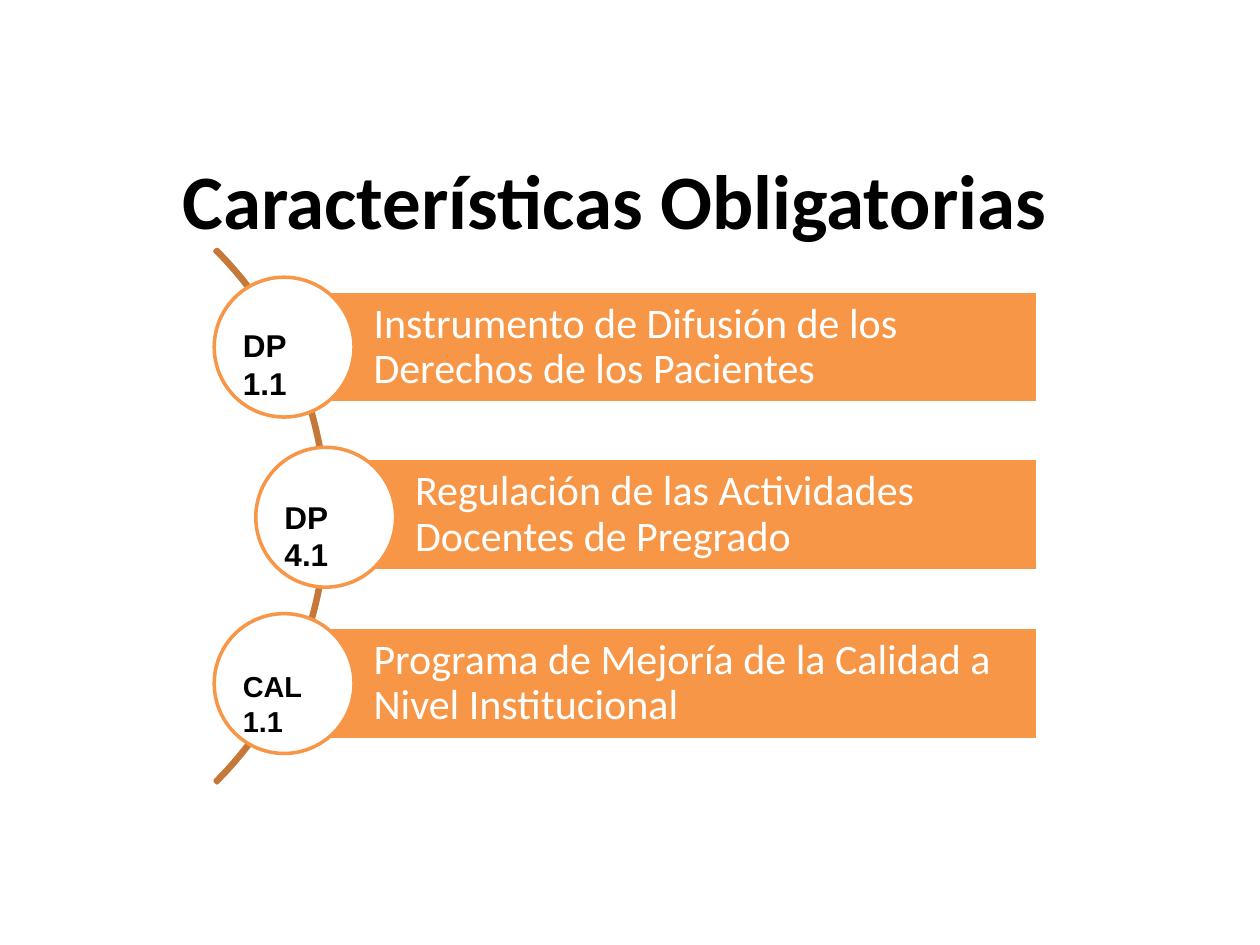
from pptx import Presentation
from pptx.dml.color import RGBColor
from pptx.enum.shapes import MSO_SHAPE
from pptx.enum.text import MSO_ANCHOR, PP_ALIGN
from pptx.util import Inches, Pt

RECT, OVAL, ARC = MSO_SHAPE.RECTANGLE, MSO_SHAPE.OVAL, MSO_SHAPE.BLOCK_ARC
MIDDLE, TOP = MSO_ANCHOR.MIDDLE, MSO_ANCHOR.TOP
LEFT, CENTER = PP_ALIGN.LEFT, PP_ALIGN.CENTER
ORANGE, BROWN, WHITE, BLACK = "F79646", "C67838", "FFFFFF", "000000"
CIRCLE = 1.11
BAR_RIGHT, BAR_HEIGHT = 8.24, 0.89

# circle left, circle top, bar top, label top, label size, label, description
ITEMS = [
    (1.7, 2.2, 2.31, 2.54, 18, "DP 1.1",
     "Instrumento de Difusión de los Derechos de los Pacientes"),
    (2.03, 3.55, 3.64, 3.9, 18, "DP 4.1",
     "Regulación de las Actividades Docentes de Pregrado"),
    (1.7, 4.87, 4.98, 5.26, 16.5, "CAL 1.1",
     "Programa de Mejoría de la Calidad a Nivel Institucional"),
]


def rgb(color):
    return RGBColor.from_string(color)


def add_shape(s, kind, box, fill, line):
    sp = s.shapes.add_shape(kind, *map(Inches, box))
    sp.shadow.inherit = False
    if fill:
        sp.fill.solid()
        sp.fill.fore_color.rgb = rgb(fill)
    else:
        sp.fill.background()
    sp.line.color.rgb = rgb(line)
    sp.line.width = Pt(2)
    return sp


def write(sp, text, size, font, color, bold=False, anchor=MIDDLE, align=LEFT):
    tf = sp.text_frame
    tf.word_wrap = True
    tf.vertical_anchor = anchor
    p = tf.paragraphs[0]
    p.text = text
    p.alignment = align
    p.font.size = Pt(size)
    p.font.name = font
    p.font.bold = bold
    p.font.color.rgb = rgb(color)
    return tf


def add_title(s, box, text):
    sp = s.shapes.add_textbox(*map(Inches, box))
    write(sp, text, 44, "Calibri", BLACK, bold=True, align=CENTER)


def add_arc(s, box):
    """Draw the thin curve from 315 to 45 degrees of the circle in box."""
    sp = add_shape(s, ARC, box, None, BROWN)
    for i, value in enumerate((189, 27, 0.004)):
        sp.adjustments[i] = value


def add_bar(s, box, text):
    sp = add_shape(s, RECT, box, ORANGE, WHITE)
    tf = write(sp, text, 24, "Calibri", WHITE)
    tf.margin_left = Inches(0.71)
    tf.margin_right = tf.margin_top = tf.margin_bottom = Inches(0.07)
    tf.paragraphs[0].line_spacing = 0.9


def add_label(s, box, text, size):
    sp = s.shapes.add_textbox(*map(Inches, box))
    write(sp, text, size, "Arial", BLACK, bold=True, anchor=TOP)


def add_item(s, left, top, bar_top, label_top, size, label, text):
    bar_left = left + CIRCLE / 2
    add_bar(s, (bar_left, bar_top, BAR_RIGHT - bar_left, BAR_HEIGHT), text)
    add_shape(s, OVAL, (left, top, CIRCLE, CIRCLE), WHITE, ORANGE)
    add_label(s, (left + 0.13, label_top, 0.87, 0.71), label, size)


def main():
    prs = Presentation()
    prs.slide_width, prs.slide_height = Inches(10), Inches(7.5)
    s = prs.slides.add_slide(prs.slide_layouts[6])
    add_title(s, (0.57, 1.03, 8.62, 1.09), "Características Obligatorias")
    add_arc(s, (-3.39, 1.1, 5.99, 5.99))
    for item in ITEMS:
        add_item(s, *item)
    prs.save("out.pptx")


if __name__ == "__main__":
    main()
